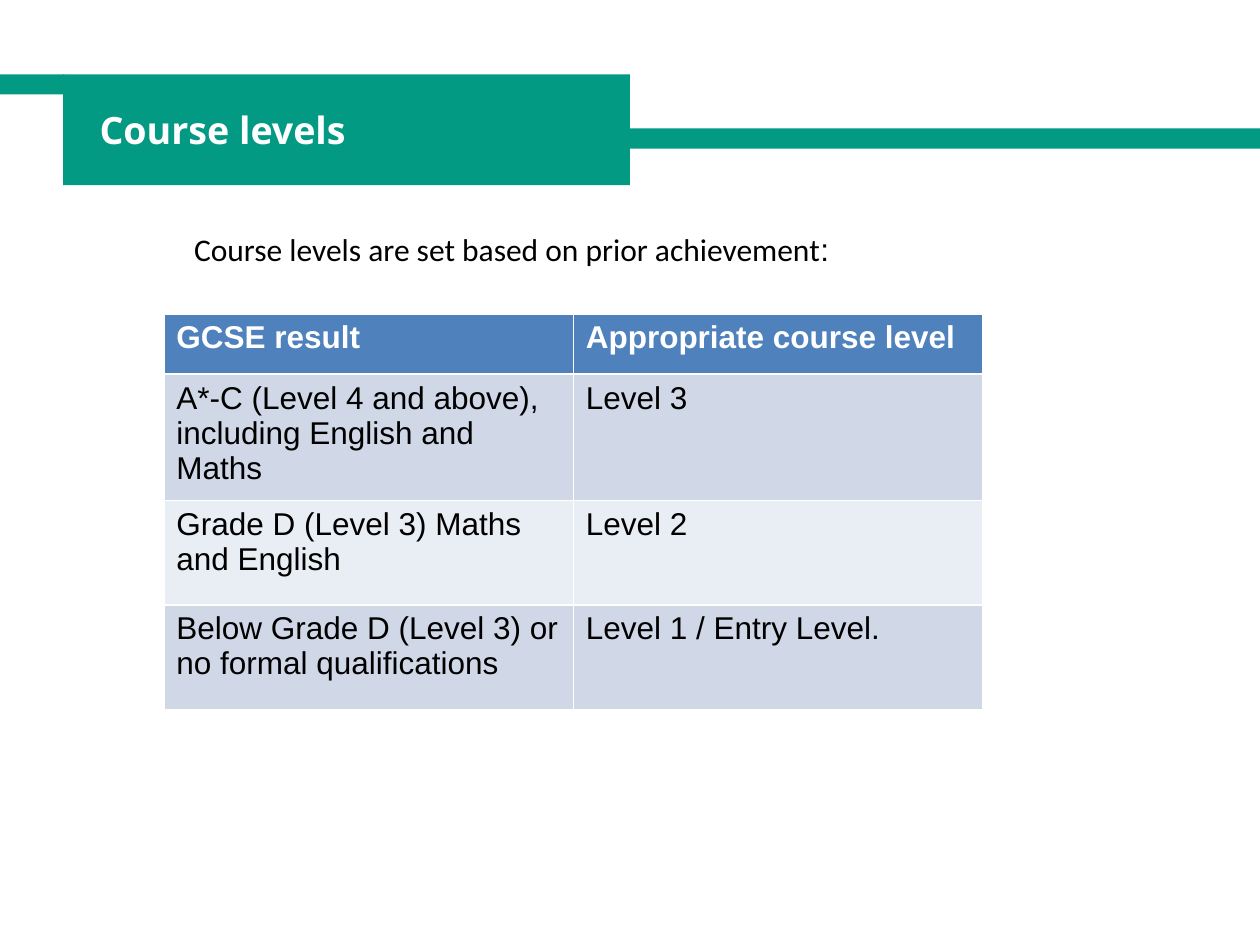
"""Build the course levels slide."""
from pptx import Presentation
from pptx.dml.color import RGBColor
from pptx.enum.shapes import MSO_SHAPE
from pptx.enum.text import MSO_ANCHOR, PP_ALIGN
from pptx.util import Inches, Pt

RECT = MSO_SHAPE.RECTANGLE
MIDDLE = MSO_ANCHOR.MIDDLE
LEFT = PP_ALIGN.LEFT

GREEN = RGBColor(0x02, 0x9A, 0x83)
BLUE = RGBColor(0x4F, 0x81, 0xBD)
BANDS = RGBColor(0xE9, 0xED, 0xF4), RGBColor(0xD0, 0xD8, 0xE8)
WHITE = RGBColor(0xFF, 0xFF, 0xFF)
BLACK = RGBColor(0x00, 0x00, 0x00)

ROWS = [
    ("GCSE result", "Appropriate course level"),
    ("A*-C (Level 4 and above), including English and Maths", "Level 3"),
    ("Grade D (Level 3) Maths and English", "Level 2"),
    ("Below Grade D (Level 3) or no formal qualifications", "Level 1 / Entry Level."),
]


class Deck:
    """Holds the slide and its text style."""

    def __init__(self, slide, face="Arial", size=18):
        self.slide = slide
        self.shapes = slide.shapes
        self.face = face
        self.size = size

    def style(self, font, color=BLACK, bold=False, face=None, size=None):
        font.name = face or self.face
        font.size = Pt(size or self.size)
        font.bold = bold
        font.color.rgb = color

    def bar(self, *box):
        bar = self.shapes.add_shape(RECT, *map(Inches, box))
        bar.shadow.inherit = False
        bar.fill.solid()
        bar.fill.fore_color.rgb = GREEN
        bar.line.fill.background()

    def title(self, text, *box):
        title = self.shapes.title
        title.left, title.top, title.width, title.height = map(Inches, box)
        title.fill.solid()
        title.fill.fore_color.rgb = GREEN
        frame = title.text_frame
        frame.text = text
        frame.vertical_anchor = MIDDLE
        frame.margin_left = frame.margin_right = Inches(0.29)
        frame.margin_top = frame.margin_bottom = 0
        para = frame.paragraphs[0]
        para.alignment = LEFT
        self.style(para.font, WHITE, True, "Open Sans", 21.5)
        self.shapes._spTree.append(title._element)

    def text(self, runs, *box):
        frame = self.shapes.add_textbox(*map(Inches, box)).text_frame
        frame.word_wrap = True
        frame.margin_left = frame.margin_right = 0
        frame.margin_top = frame.margin_bottom = 0
        para = frame.paragraphs[0]
        para.line_spacing = Pt(22.8)
        for words, face in runs:
            run = para.add_run()
            run.text = words
            self.style(run.font, face=face)

    def table(self, rows, heights, *box):
        table = self.shapes.add_table(len(rows), len(rows[0]), *map(Inches, box)).table
        for i, (row, high) in enumerate(zip(rows, heights)):
            table.rows[i].height = Inches(high)
            for j, words in enumerate(row):
                cell = table.cell(i, j)
                cell.text = words
                cell.fill.solid()
                cell.fill.fore_color.rgb = BANDS[i % 2] if i else BLUE
                color = BLACK if i else WHITE
                self.style(cell.text_frame.paragraphs[0].font, color, i == 0)


def main():
    prs = Presentation()
    prs.slide_width, prs.slide_height = Inches(10), Inches(7.5)
    deck = Deck(prs.slides.add_slide(prs.slide_layouts[5]))
    deck.bar(0, 0.59, 0.51, 0.16)
    deck.bar(3.35, 1.02, 6.65, 0.16)
    deck.title("Course levels", 0.5, 0.59, 4.5, 0.88)
    intro = "Course levels are set based on prior achievement"
    deck.text([(intro, "Calibri"), (":", "Arial")], 1.54, 1.81, 7.67, 0.4)
    deck.table(ROWS, [0.48, 0.83, 0.83, 0.83], 1.3, 2.49, 6.5, 2.97)
    prs.save("out.pptx")


if __name__ == "__main__":
    main()
